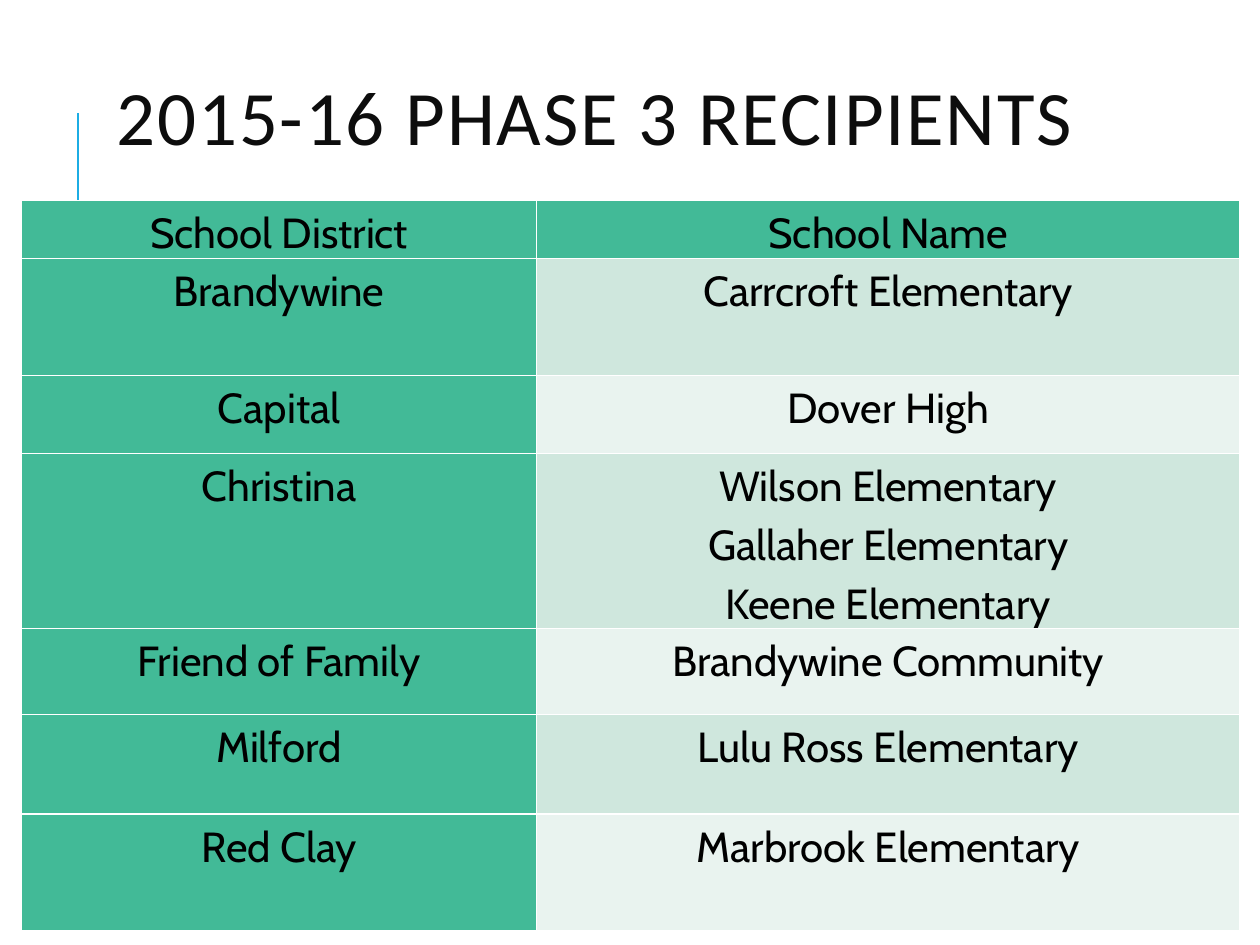
from dataclasses import dataclass

from lxml import etree
from pptx import Presentation
from pptx.dml.color import RGBColor
from pptx.enum.shapes import MSO_CONNECTOR
from pptx.enum.text import MSO_ANCHOR, PP_ALIGN
from pptx.oxml.ns import qn
from pptx.util import Inches, Pt

CENTER, LEFT = PP_ALIGN.CENTER, PP_ALIGN.LEFT
MIDDLE = MSO_ANCHOR.MIDDLE
STRAIGHT = MSO_CONNECTOR.STRAIGHT


@dataclass(frozen=True)
class Theme:
    accent: str = "1CADE4"
    title: str = "0D0D0D"
    text: str = "000000"
    green: str = "42BA97"
    bands: tuple = ("CFE7DD", "E9F3EF")
    border: str = "FFFFFF"
    title_font: str = "Calibri"
    table_font: str = "Cabin"
    title_size: int = 44
    table_size: int = 24


theme = Theme()


def write(frame, text, font, size, color, align=LEFT, line_spacing=1.0, tracking=0):
    """Write one paragraph per line of text; tracking is in points."""
    frame.word_wrap = True
    for i, line in enumerate(text.split("\n")):
        paragraph = frame.paragraphs[0] if i == 0 else frame.add_paragraph()
        paragraph.alignment = align
        paragraph.line_spacing = line_spacing
        run = paragraph.add_run()
        run.text = line
        run.font.name = font
        run.font.size = Pt(size)
        run.font.color.rgb = RGBColor.from_string(color)
        if tracking:
            run.font._element.set("spc", str(tracking * 100))


def set_borders(cell, color, width):
    """Outline a cell; borders must precede the fill in its properties."""
    properties = cell._tc.get_or_add_tcPr()
    for position, side in enumerate(("a:lnL", "a:lnR", "a:lnT", "a:lnB")):
        line = etree.Element(qn(side), w=str(Pt(width)))
        fill = etree.SubElement(line, qn("a:solidFill"))
        etree.SubElement(fill, qn("a:srgbClr"), val=color)
        properties.insert(position, line)


presentation = Presentation()
presentation.slide_width = Inches(10)
presentation.slide_height = Inches(7.5)
slide = presentation.slides.add_slide(presentation.slide_layouts[6])

# Accent line beside the title
accent = slide.shapes.add_connector(
    STRAIGHT, Inches(0.62), Inches(1.9), Inches(0.62), Inches(0.9))
accent.line.color.rgb = RGBColor.from_string(theme.accent)
accent.line.width = Pt(1.5)
etree.SubElement(accent._element.spPr, qn("a:effectLst"))

# Title
title = slide.shapes.add_textbox(Inches(0.83), Inches(0.35), Inches(9), Inches(1.25))
title.text_frame.vertical_anchor = MIDDLE
write(title.text_frame, "2015-16 PHASE 3 RECIPIENTS", theme.title_font,
      theme.title_size, theme.title, line_spacing=0.8, tracking=1)

# Recipients: district, schools, row height
recipients = [
    ("School District", "School Name", 0.46),
    ("Brandywine", "Carrcroft Elementary", 0.93),
    ("Capital", "Dover High", 0.62),
    ("Christina", "Wilson Elementary\nGallaher Elementary\nKeene Elementary", 1.39),
    ("Friend of Family", "Brandywine Community", 0.68),
    ("Milford", "Lulu Ross Elementary", 0.79),
    ("Red Clay", "Marbrook Elementary", 0.93),
]
column_widths = (4.09, 5.58)

# Table
table = slide.shapes.add_table(
    len(recipients), len(column_widths), Inches(0.17), Inches(1.59),
    Inches(sum(column_widths)), Inches(sum(row[2] for row in recipients))).table
for column, width in zip(table.columns, column_widths):
    column.width = Inches(width)

for r, (district, schools, height) in enumerate(recipients):
    table.rows[r].height = Inches(height)
    school_fill = theme.green if r == 0 else theme.bands[(r - 1) % 2]
    for c, (text, fill) in enumerate(((district, theme.green), (schools, school_fill))):
        cell = table.cell(r, c)
        cell.margin_left = cell.margin_right = Inches(0.07)
        cell.margin_top = cell.margin_bottom = 0
        cell.fill.solid()
        cell.fill.fore_color.rgb = RGBColor.from_string(fill)
        set_borders(cell, theme.border, 1)
        write(cell.text_frame, text, theme.table_font, theme.table_size,
              theme.text, align=CENTER, line_spacing=1.15)
        # Regular weight in the header row as well
        for paragraph in cell.text_frame.paragraphs:
            paragraph.runs[0].font.bold = False

presentation.save("out.pptx")
